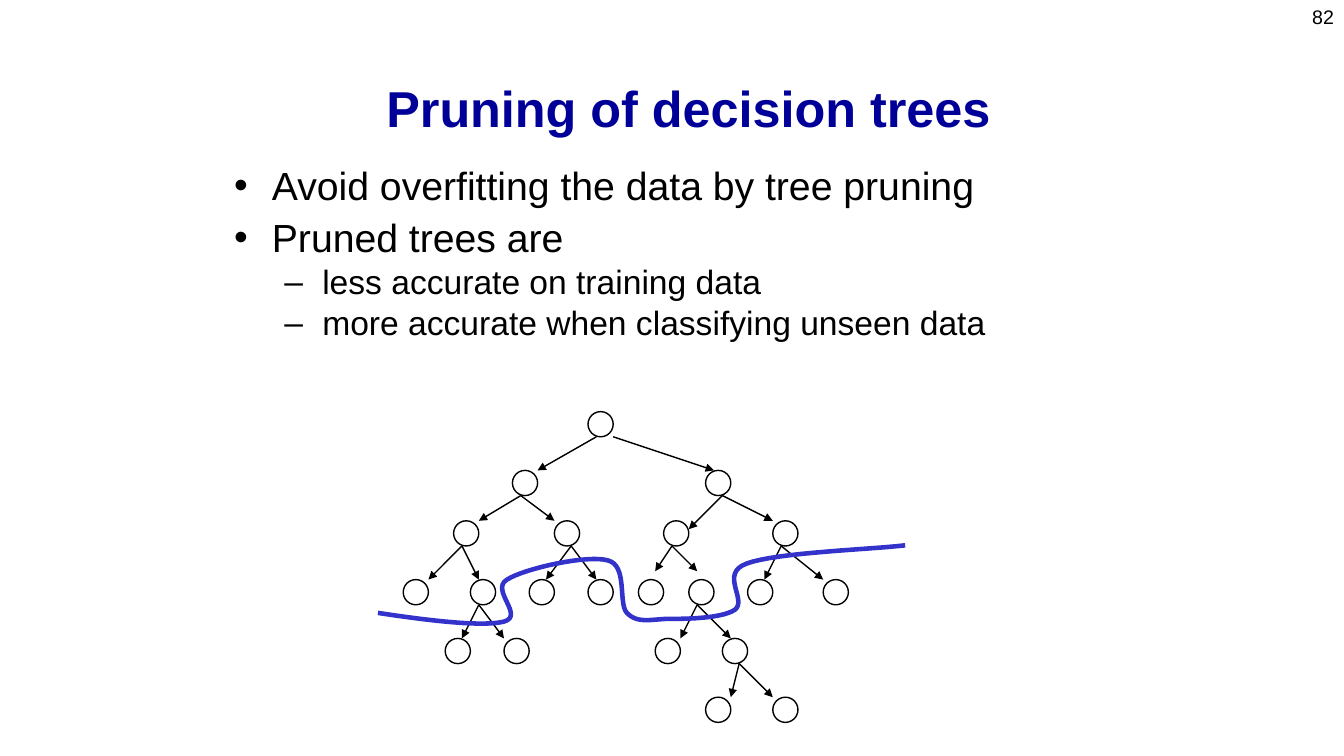
from pptx import Presentation
from pptx.dml.color import RGBColor
from pptx.enum.shapes import MSO_CONNECTOR as CONNECTOR, MSO_SHAPE as SHAPE
from pptx.enum.text import MSO_ANCHOR as ANCHOR, MSO_AUTO_SIZE as AUTO, PP_ALIGN as ALIGN
from pptx.oxml.ns import qn
from pptx.oxml.xmlchemy import OxmlElement as element
from pptx.util import Pt

BLACK = RGBColor(0x00, 0x00, 0x00)
WHITE = RGBColor(0xFF, 0xFF, 0xFF)
NAVY = RGBColor(0x00, 0x00, 0x99)
BLUE = RGBColor(0x33, 0x33, 0xCC)

NODE_SIZE = 18
# Top of each tree level, with the left edges of its nodes
LEVELS = {
    294: [420],
    336: [366, 504],
    372: [324, 396, 474, 552],
    414: [288, 336, 378, 420, 456, 492, 534, 588],
    456: [318, 360, 468, 516],
    498: [504, 552],
}
# Start of the branches below a node, with their ends
BRANCHES = [
    ((426, 312), [(384, 336)]),
    ((438, 312), [(510, 336)]),
    ((372, 354), [(342, 372), (396, 372)]),
    ((516, 354), [(492, 378), (552, 372)]),
    ((330, 390), [(306, 414), (342, 414)]),
    ((408, 390), [(390, 414), (426, 414)]),
    ((480, 390), [(468, 408), (498, 408)]),
    ((558, 390), [(546, 414), (588, 414)]),
    ((342, 432), [(330, 456), (360, 456)]),
    ((498, 432), [(486, 456), (522, 456)]),
    ((528, 474), [(522, 498), (552, 498)]),
]
# Pruning cut: start, then two control points and an end for each bend
CUT_START = (270, 437.8)
CUT_BENDS = [
    [(307.4, 443.5), (344.9, 447.8), (360, 444)],
    [(375.1, 439.9), (349.9, 421.2), (362.2, 414)],
    [(374.4, 406.1), (419.8, 396), (434.2, 400.3)],
    [(448.6, 403.9), (441.4, 430.6), (447.8, 437.8)],
    [(455, 445), (463, 442.8), (475.2, 442.1)],
    [(488.2, 442.1), (514.8, 442.1), (524.9, 435.6)],
    [(534.2, 428.4), (513.4, 409.7), (533.5, 402.5)],
    [(554.4, 394.6), (623.5, 392.4), (646.6, 389.5)],
]
STEPS = 16

POINTS = [
    ("Avoid overfitting the data by tree pruning", 0),
    ("Pruned trees are", 0),
    ("less accurate on training data", 1),
    ("more accurate when classifying unseen data", 1),
]
# Bullet, left margin, text size and line spacing of each list level
LIST_STYLES = [("•", 36, 28, 1.0), ("–", 72, 24, 0.9)]


def apply(target, values):
    for name, value in values.items():
        setattr(target, name, value)


def place(shape, left, top, width, height):
    apply(shape, {"left": Pt(left), "top": Pt(top), "width": Pt(width), "height": Pt(height)})


def format_frame(frame, anchor):
    apply(frame, {"word_wrap": True, "auto_size": AUTO.NONE, "vertical_anchor": anchor,
                  "margin_left": Pt(7.2), "margin_right": Pt(7.2),
                  "margin_top": Pt(3.6), "margin_bottom": Pt(3.6)})


def write(paragraph, text, size, color=BLACK, bold=False, **layout):
    run = paragraph.add_run()
    run.text = text
    apply(run.font, {"name": "Arial", "size": Pt(size), "bold": bold})
    run.font.color.rgb = color
    apply(paragraph, layout)


def add_bullet(paragraph, char, margin):
    props = paragraph._p.get_or_add_pPr()
    props.set("marL", str(Pt(margin)))
    props.set("indent", str(Pt(-27)))
    bullet_color = element("a:buClr")
    black = element("a:srgbClr")
    black.set("val", str(BLACK))
    bullet_color.append(black)
    font = element("a:buFont")
    font.set("typeface", "Arial")
    bullet = element("a:buChar")
    bullet.set("char", char)
    for part in (bullet_color, font, bullet):
        props.append(part)


def fill_list(body):
    frame = body.text_frame
    format_frame(frame, ANCHOR.TOP)
    for index, (text, level) in enumerate(POINTS):
        paragraph = frame.add_paragraph() if index else frame.paragraphs[0]
        char, margin, size, spacing = LIST_STYLES[level]
        write(paragraph, text, size, level=level, alignment=ALIGN.LEFT,
              line_spacing=spacing, space_before=Pt(3.6), space_after=Pt(0))
        add_bullet(paragraph, char, margin)


def add_node(slide, left, top):
    node = slide.shapes.add_shape(SHAPE.OVAL, Pt(left), Pt(top), Pt(NODE_SIZE), Pt(NODE_SIZE))
    node.shadow.inherit = False
    node.fill.solid()
    node.fill.fore_color.rgb = WHITE
    node.line.color.rgb = BLACK
    node.line.width = Pt(1)


def add_branch(slide, start, end):
    branch = slide.shapes.add_connector(CONNECTOR.STRAIGHT, *map(Pt, start + end))
    branch.line.color.rgb = BLACK
    branch.line.width = Pt(1)
    props = branch._element.spPr
    arrowhead = element("a:tailEnd")
    arrowhead.set("type", "triangle")
    props.find(qn("a:ln")).append(arrowhead)
    props.append(element("a:effectLst"))


def bend_point(controls, t):
    weights = ((1 - t) ** 3, 3 * t * (1 - t) ** 2, 3 * t ** 2 * (1 - t), t ** 3)
    return tuple(Pt(sum(w * c for w, c in zip(weights, axis))) for axis in zip(*controls))


def add_cut(slide):
    vertices, start = [], CUT_START
    for bend in CUT_BENDS:
        vertices += [bend_point([start, *bend], step / STEPS) for step in range(1, STEPS + 1)]
        start = bend[-1]
    outline = slide.shapes.build_freeform(*map(Pt, CUT_START))
    outline.add_line_segments(vertices, close=False)
    cut = outline.convert_to_shape()
    cut.shadow.inherit = False
    cut.fill.background()
    cut.line.color.rgb = BLUE
    cut.line.width = Pt(3.25)


def main():
    deck = Presentation()
    apply(deck, {"slide_width": Pt(960), "slide_height": Pt(540)})
    slide = deck.slides.add_slide(deck.slide_layouts[1])

    # Title and list
    title, body = slide.placeholders
    place(title, 144, 36, 696, 66)
    format_frame(title.text_frame, ANCHOR.BOTTOM)
    write(title.text_frame.paragraphs[0], "Pruning of decision trees", 36, NAVY, True,
          alignment=ALIGN.CENTER, line_spacing=1.1)
    place(body, 151, 111.6, 660, 396)
    fill_list(body)

    # Page number
    number = slide.shapes.add_textbox(Pt(736), Pt(0), Pt(224), Pt(37.5))
    format_frame(number.text_frame, ANCHOR.TOP)
    write(number.text_frame.paragraphs[0], "82", 14, alignment=ALIGN.RIGHT)

    # Decision tree
    for top, lefts in LEVELS.items():
        for left in lefts:
            add_node(slide, left, top)
    for start, ends in BRANCHES:
        for end in ends:
            add_branch(slide, start, end)

    # Pruning cut
    add_cut(slide)
    deck.save("out.pptx")


if __name__ == "__main__":
    main()
